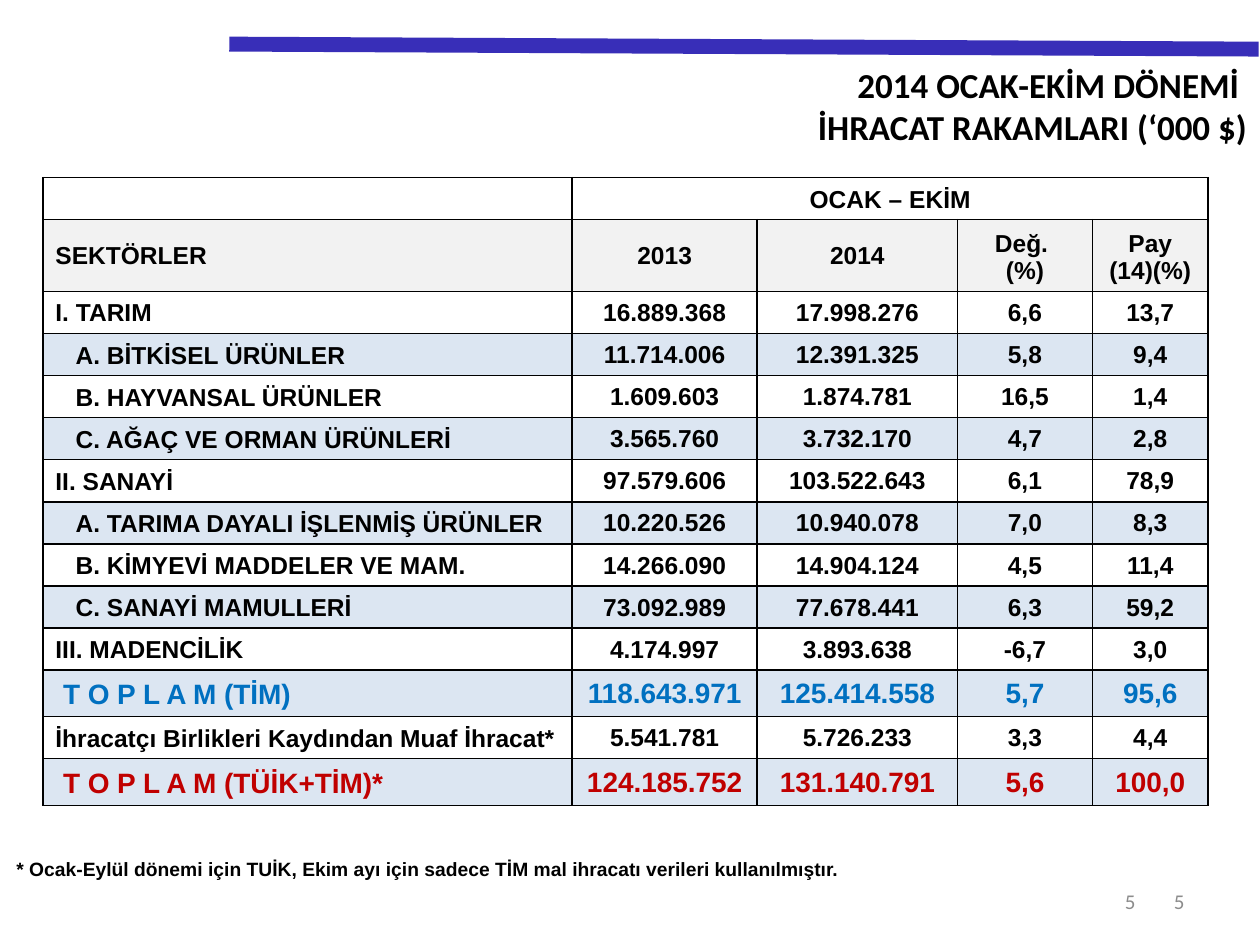
from lxml.etree import SubElement
from pptx import Presentation
from pptx.dml.color import RGBColor
from pptx.enum.shapes import MSO_CONNECTOR
from pptx.enum.text import MSO_ANCHOR, PP_ALIGN
from pptx.oxml.ns import qn
from pptx.util import Inches, Pt

COLORS = {
    "black": "000000", "gray": "8C8C8C", "bar": "382EB8", "header": "F2F2F2",
    "band": "DCE6F2", "tim": "0070C0", "total": "C00000",
}
TITLE = "2014 OCAK-EKİM DÖNEMİ \nİHRACAT RAKAMLARI (‘000 $)"
FOOTNOTE = ("* Ocak-Eylül dönemi için TUİK, Ekim ayı için sadece TİM "
            "mal ihracatı verileri kullanılmıştır.")
PAGE = "5"
PAGE_BOXES = [(7.17, 2.33), (7.01, 2.1)]
HEADERS = [
    ["", "OCAK – EKİM", "", "", ""],
    ["SEKTÖRLER", "2013", "2014", "Değ. \n(%)", "Pay\n(14)(%)"],
]
SECTORS = [
    ("main", "I. TARIM", "16.889.368", "17.998.276", "6,6", "13,7"),
    ("sub", "A. BİTKİSEL ÜRÜNLER", "11.714.006", "12.391.325", "5,8", "9,4"),
    ("sub", "B. HAYVANSAL ÜRÜNLER", "1.609.603", "1.874.781", "16,5", "1,4"),
    ("sub", "C. AĞAÇ VE ORMAN ÜRÜNLERİ", "3.565.760", "3.732.170", "4,7", "2,8"),
    ("main", "II. SANAYİ", "97.579.606", "103.522.643", "6,1", "78,9"),
    ("sub", "A. TARIMA DAYALI İŞLENMİŞ ÜRÜNLER", "10.220.526", "10.940.078", "7,0", "8,3"),
    ("sub", "B. KİMYEVİ MADDELER VE MAM.", "14.266.090", "14.904.124", "4,5", "11,4"),
    ("sub", "C. SANAYİ MAMULLERİ", "73.092.989", "77.678.441", "6,3", "59,2"),
    ("main", "III. MADENCİLİK", "4.174.997", "3.893.638", "-6,7", "3,0"),
    ("tim", "T O P L A M (TİM)", "118.643.971", "125.414.558", "5,7", "95,6"),
    ("main", "İhracatçı Birlikleri Kaydından Muaf İhracat*", "5.541.781", "5.726.233", "3,3", "4,4"),
    ("total", "T O P L A M (TÜİK+TİM)*", "124.185.752", "131.140.791", "5,6", "100,0"),
]
STYLES = {
    "main": {"size": 14, "color": "black", "indent": 0},
    "sub": {"size": 14, "color": "black", "indent": 0.16},
    "tim": {"size": 16, "color": "tim", "indent": 0.06},
    "total": {"size": 16, "color": "total", "indent": 0.06},
}
COLS = [4.2, 1.47, 1.59, 1.07, 0.92]
TABLE_H, HEADER_H, TOTAL_H = 4.97, 0.57, 0.37


def rgb(name):
    """Return the named colour."""
    return RGBColor.from_string(COLORS[name])


def write(tf, text, size=14, color="black", font="Arial", bold=True, align=PP_ALIGN.LEFT):
    """Fill a text frame with one paragraph per line of text."""
    for i, line in enumerate(text.split("\n")):
        p = tf.add_paragraph() if i else tf.paragraphs[0]
        p.alignment = align
        if not line:
            SubElement(p._p, qn("a:endParaRPr"), sz=str(size * 100))
            continue
        r = p.add_run()
        r.text = line
        r.font.size, r.font.bold, r.font.name = Pt(size), bold, font
        r.font.color.rgb = rgb(color)


def add_grid(s, at, cols, rows):
    """Add a table without style banding and set its columns and rows."""
    tbl = s.shapes.add_table(len(rows), len(cols), *map(Inches, at)).table
    tbl.first_row = tbl.horz_banding = False
    for col, w in zip(tbl.columns, cols):
        col.width = Inches(w)
    for row, h in zip(tbl.rows, rows):
        row.height = Inches(h)
    return tbl


def set_fill(cell, name):
    """Fill a cell with a named colour, or leave it clear."""
    if name:
        cell.fill.solid()
        cell.fill.fore_color.rgb = rgb(name)
    else:
        cell.fill.background()


def set_borders(cell):
    """Draw a one-point black line on each side of a cell."""
    for side in ("L", "R", "T", "B"):
        ln = SubElement(cell._tc.get_or_add_tcPr(), qn(f"a:ln{side}"), w=str(Pt(1)))
        fill = SubElement(ln, qn("a:solidFill"))
        SubElement(fill, qn("a:srgbClr"), val=COLORS["black"])


def set_tight(cell):
    """Give a cell narrow margins and middle anchoring."""
    cell.margin_left = cell.margin_top = cell.margin_right = Inches(0.01)
    cell.margin_bottom = 0
    cell.vertical_anchor = MSO_ANCHOR.MIDDLE


def add_export_table(s):
    """Build the table of exports by sector."""
    kinds = [row[0] for row in SECTORS]
    totals = sum(k in ("tim", "total") for k in kinds)
    row_h = (TABLE_H - HEADER_H - totals * TOTAL_H) / (len(kinds) + 1 - totals)
    heights = [row_h, HEADER_H] + [TOTAL_H if k in ("tim", "total") else row_h for k in kinds]
    tbl = add_grid(s, (0.34, 1.41, sum(COLS), TABLE_H), COLS, heights)
    tbl.cell(0, 1).merge(tbl.cell(0, 4))
    for i, row in enumerate(HEADERS + [row[1:] for row in SECTORS]):
        kind = kinds[i - 2] if i > 1 else "main"
        style = STYLES[kind]
        fill = "header" if i == 1 else "band" if i > 1 and i % 2 else None
        for j, text in enumerate(row):
            cell = tbl.cell(i, j)
            set_borders(cell)
            set_fill(cell, fill)
            if i > 1 and j:
                set_tight(cell)
            else:
                middle = i == 1 and j < 3
                cell.vertical_anchor = MSO_ANCHOR.MIDDLE if middle else MSO_ANCHOR.BOTTOM
                cell.margin_left = Inches(0.1 + style["indent"])
            write(cell.text_frame, text, size=style["size"], color=style["color"],
                  align=PP_ALIGN.CENTER if j else PP_ALIGN.LEFT)


def main():
    """Build and save the slide."""
    prs = Presentation()
    prs.slide_width, prs.slide_height = Inches(10), Inches(7.5)
    s = prs.slides.add_slide(prs.slide_layouts[5])

    bar = s.shapes.add_connector(MSO_CONNECTOR.STRAIGHT, *map(Inches, (1.82, 0.35, 9.99, 0.39)))
    bar.line.color.rgb, bar.line.width = rgb("bar"), Pt(8.5)
    SubElement(bar._element.spPr, qn("a:effectLst"))

    title = s.shapes.title
    title.left, title.top, title.width, title.height = map(Inches, (1.06, 0.45, 8.94, 0.77))
    title.text_frame.vertical_anchor = MSO_ANCHOR.TOP
    write(title.text_frame, TITLE, size=20, font="Calibri", align=PP_ALIGN.RIGHT)

    for left, width in PAGE_BOXES:
        tf = s.shapes.add_textbox(*map(Inches, (left, 6.95, width, 0.4))).text_frame
        tf.word_wrap = True
        tf.vertical_anchor = MSO_ANCHOR.MIDDLE
        write(tf, PAGE, size=12, color="gray", font="Calibri", bold=False, align=PP_ALIGN.RIGHT)

    add_export_table(s)

    note = add_grid(s, (0.12, 6.74, 7.4, 0.31), [7.4], [0.31]).cell(0, 0)
    set_fill(note, None)
    set_tight(note)
    write(note.text_frame, FOOTNOTE, size=11)

    prs.save("out.pptx")


if __name__ == "__main__":
    main()
